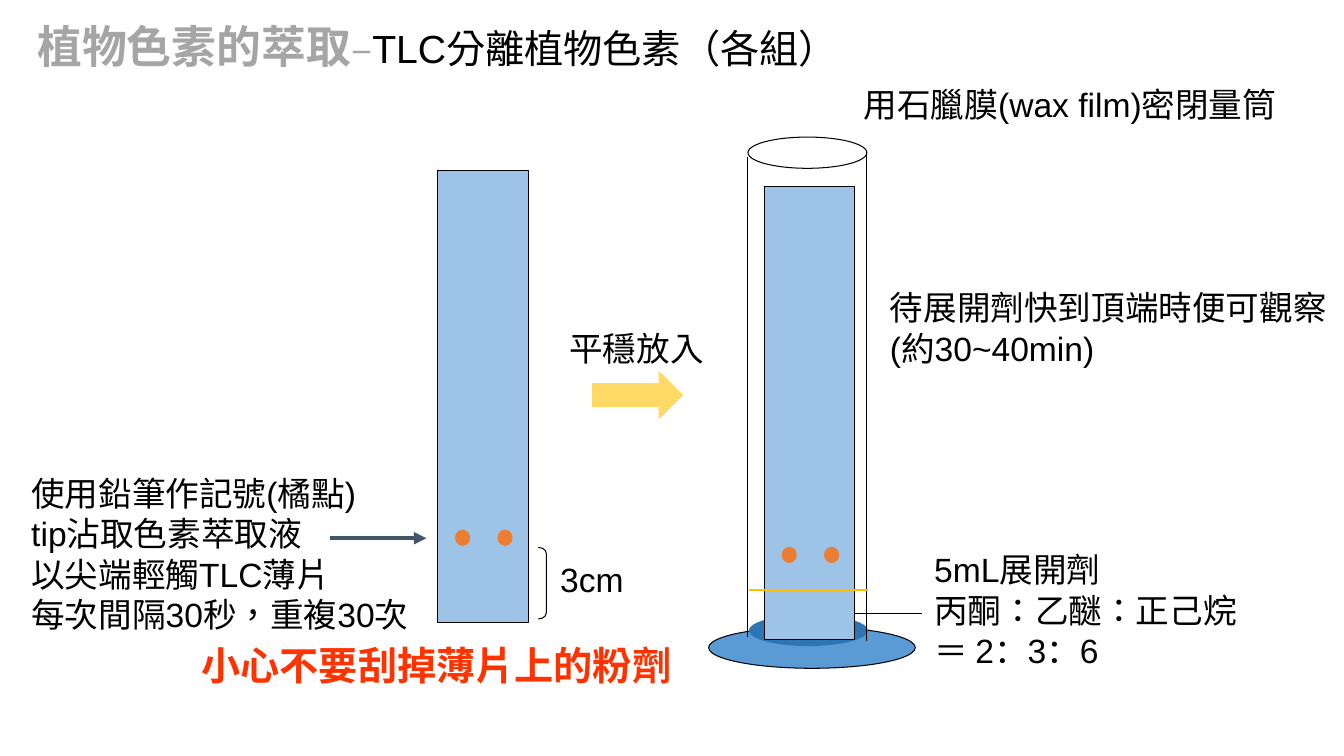
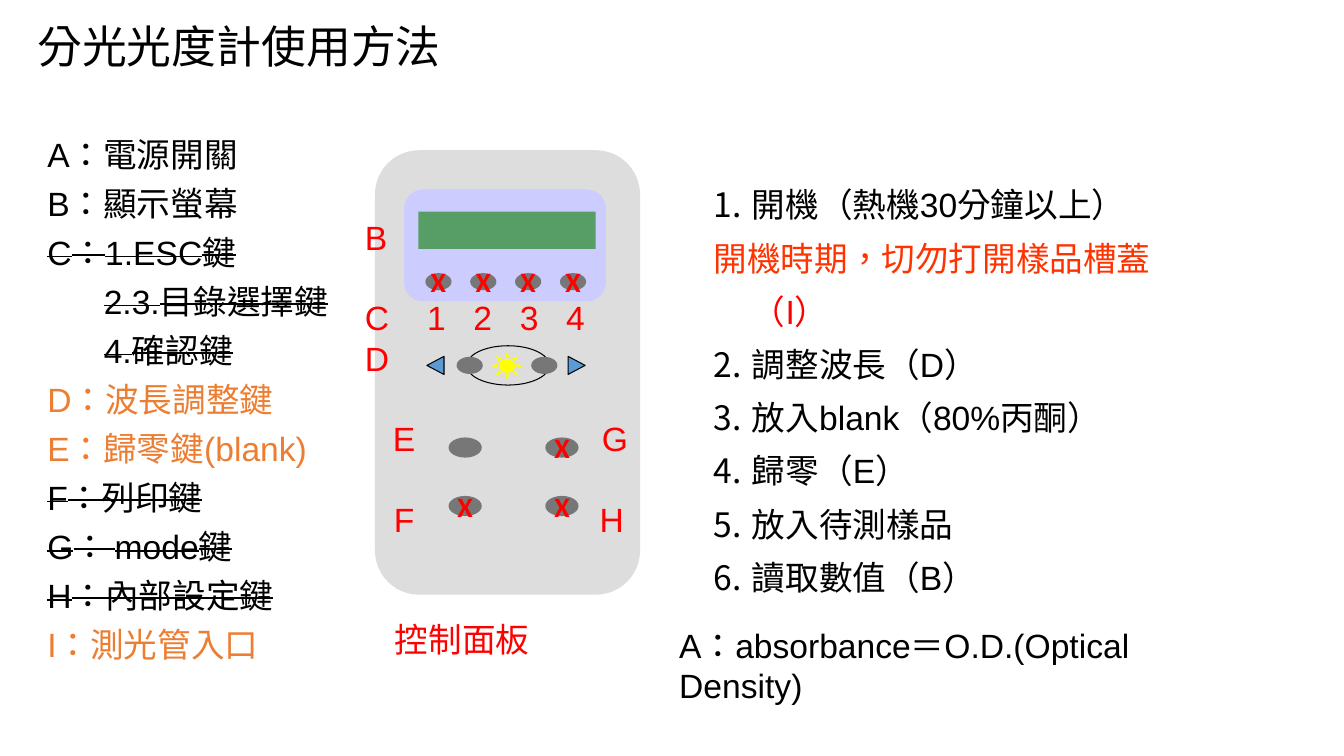
"""Build two slides on separating plant pigments and using a spectrophotometer."""
from dataclasses import dataclass, replace
from typing import Optional, Sequence

from lxml.etree import SubElement
from pptx import Presentation
from pptx.dml.color import RGBColor
from pptx.enum.shapes import MSO_CONNECTOR, MSO_SHAPE
from pptx.enum.text import MSO_ANCHOR, MSO_AUTO_SIZE, PP_ALIGN
from pptx.oxml.ns import qn
from pptx.shapes.autoshape import Shape
from pptx.slide import Slide
from pptx.text.text import TextFrame
from pptx.util import Inches, Pt

CELL = Inches(0.1)
COLUMNS, ROWS = 133.33, 75
LATIN_FONT, MARK_FONT, CHINESE_FONT = "Arial", "Calibri", "Noto Sans CJK SC"
LANGUAGE = "zh-TW"

BLACK, RED, WARNING, ORANGE = "000000", "FF0000", "FF3300", "ED7D31"
MUTED, STRIP, SOLVENT, BASE = "A5A5A5", "9DC3E6", "2E75B6", "5B9BD5"
ARROW, GOLD, SLATE, BUTTON = "FFD966", "FFC000", "44546A", "777777"
CASING, BEZEL, SCREEN, SUN = "DDDDDD", "CCCCFF", "569E65", "FFFF00"


@dataclass(frozen=True)
class Box:
    """Place and size in grid cells."""
    column: float
    row: float
    columns: float
    rows: float


@dataclass(frozen=True)
class Span:
    """Text that may differ from its paragraph."""
    text: str
    size: Optional[float] = None
    color: Optional[str] = None
    bold: Optional[bool] = None


@dataclass(frozen=True)
class Para:
    """A paragraph and its format."""
    spans: tuple[Span, ...]
    size: float = 24
    color: str = BLACK
    bold: bool = False
    strike: bool = False
    font: str = LATIN_FONT
    align: PP_ALIGN = PP_ALIGN.LEFT
    spacing: Optional[float] = None
    margin: float = 0
    indent: float = 0
    number: Optional[int] = None


@dataclass(frozen=True)
class Figure:
    """A preset shape and its look."""
    kind: MSO_SHAPE
    box: Box
    fill: Optional[str] = None
    line: Optional[str] = None
    rotation: float = 0
    adjustment: Optional[float] = None


@dataclass(frozen=True)
class Stroke:
    """A straight line between two grid points."""
    start: tuple[float, float]
    end: tuple[float, float]
    color: str = BLACK
    weight: float = 0.75
    arrow: bool = False


TITLE_BOX = Box(2.7, 1.3, 86, 6.4)
TITLE = Para((), size=32)


def cells(count: float) -> int:
    """Turn grid cells into a length."""
    return round(count * CELL)


def rgb(color: str) -> RGBColor:
    """Turn a hex string into a colour."""
    return RGBColor.from_string(color)


def plain(text: str, **style) -> Para:
    """Make a paragraph of a single span."""
    return Para((Span(text),), **style)


def format_paragraph(paragraph, para: Para) -> None:
    """Apply the paragraph's font, spacing, indents and numbering."""
    font = paragraph.font
    font.size, font.bold, font.name = Pt(para.size), para.bold, para.font
    font.color.rgb = rgb(para.color)
    paragraph.alignment = para.align
    paragraph.line_spacing = Pt(para.spacing or round(para.size * 1.2, 1))
    paragraph.space_before = paragraph.space_after = Pt(0)
    properties = paragraph._p.get_or_add_pPr()
    properties.set("marL", str(cells(para.margin)))
    properties.set("indent", str(cells(para.indent)))
    default = properties.find(qn("a:defRPr"))
    default.set("lang", LANGUAGE)
    if para.strike:
        default.set("strike", "sngStrike")
    SubElement(default, qn("a:ea")).set("typeface", CHINESE_FONT)
    if para.number is None:
        bullet = SubElement(properties, qn("a:buNone"))
    else:
        bullet = SubElement(properties, qn("a:buAutoNum"))
        bullet.set("type", "arabicPeriod")
        bullet.set("startAt", str(para.number))
    default.addprevious(bullet)


def write(frame: TextFrame, paras: Sequence[Para]) -> None:
    """Fill a text frame with paragraphs."""
    frame.word_wrap = True
    frame.auto_size = MSO_AUTO_SIZE.NONE
    for index, para in enumerate(paras):
        paragraph = frame.add_paragraph() if index else frame.paragraphs[0]
        format_paragraph(paragraph, para)
        for span in para.spans:
            run = paragraph.add_run()
            run.text = span.text
            if span.size:
                run.font.size = Pt(span.size)
            if span.color:
                run.font.color.rgb = rgb(span.color)
            if span.bold is not None:
                run.font.bold = span.bold


def fill_placeholder(holder: Shape, box: Box, paras: Sequence[Para]) -> None:
    """Move a template placeholder and write its text."""
    holder.left, holder.top = cells(box.column), cells(box.row)
    holder.width, holder.height = cells(box.columns), cells(box.rows)
    write(holder.text_frame, paras)


def add_text(page: Slide, box: Box, *paras: Para) -> Shape:
    """Add a wrapped text box."""
    shape = page.shapes.add_textbox(*map(cells, (box.column, box.row, box.columns, box.rows)))
    write(shape.text_frame, paras)
    return shape


def add_mark(page: Slide, center: tuple[float, float], para: Para) -> None:
    """Centre a short label on a grid point."""
    box = Box(center[0] - 2, center[1] - 2.5, 4, 5)
    frame = add_text(page, box, replace(para, align=PP_ALIGN.CENTER)).text_frame
    frame.margin_left = frame.margin_right = frame.margin_top = frame.margin_bottom = 0
    frame.vertical_anchor = MSO_ANCHOR.MIDDLE


def add_figure(page: Slide, figure: Figure) -> None:
    """Draw a preset shape."""
    box = figure.box
    shape = page.shapes.add_shape(
        figure.kind, *map(cells, (box.column, box.row, box.columns, box.rows)))
    shape.shadow.inherit = False
    shape.rotation = figure.rotation
    if figure.adjustment is not None:
        shape.adjustments[0] = figure.adjustment
    if figure.fill:
        shape.fill.solid()
        shape.fill.fore_color.rgb = rgb(figure.fill)
    else:
        shape.fill.background()
    if figure.line:
        shape.line.color.rgb = rgb(figure.line)
        shape.line.width = Pt(0.75)
    else:
        shape.line.fill.background()


def add_stroke(page: Slide, stroke: Stroke) -> None:
    """Draw a straight line or arrow."""
    connector = page.shapes.add_connector(
        MSO_CONNECTOR.STRAIGHT, *map(cells, stroke.start + stroke.end))
    connector.line.color.rgb = rgb(stroke.color)
    connector.line.width = Pt(stroke.weight)
    properties = connector._element.spPr
    if stroke.arrow:
        SubElement(properties.find(qn("a:ln")), qn("a:tailEnd")).set("type", "triangle")
    SubElement(properties, qn("a:effectLst"))


def add_strip(page: Slide, column: float, row: float, spot_row: float) -> None:
    """Draw a chromatography strip with its two spots."""
    add_figure(page, Figure(MSO_SHAPE.RECTANGLE, Box(column, row, 9, 44.9), STRIP, BLACK))
    for offset in (1.8, 6):
        spot = Box(column + offset, spot_row, 1.4, 1.5)
        add_figure(page, Figure(MSO_SHAPE.OVAL, spot, ORANGE, ORANGE))


def build_chromatography(deck) -> None:
    """Build the slide on separating pigments."""
    page = deck.slides.add_slide(deck.slide_layouts[1])
    heading = (Span("植物色素的萃取", color=MUTED, bold=True),
               Span("–", size=28, color=MUTED),
               Span("TLC分離植物色素（各組）", size=28))
    fill_placeholder(page.shapes.title, TITLE_BOX, [replace(TITLE, spans=heading)])
    steps = ("使用鉛筆作記號(橘點)", "tip沾取色素萃取液", "以尖端輕觸TLC薄片", "每次間隔30秒，重複30次")
    fill_placeholder(page.placeholders[1], Box(2.1, 46.4, 39.8, 20.8),
                     [plain(step) for step in steps])
    add_strip(page, 43.4, 16.9, 52.6)
    for figure in (
        Figure(MSO_SHAPE.OVAL, Box(74.2, 13.6, 11.8, 3.1), line=BLACK),
        Figure(MSO_SHAPE.OVAL, Box(70.3, 62.2, 20.5, 4.1), BASE, BLACK),
        Figure(MSO_SHAPE.OVAL, Box(74.3, 61, 11.8, 3.1), SOLVENT),
        Figure(MSO_SHAPE.LEFT_BRACKET, Box(53.4, 54.3, 0.8, 7.1), None, BLACK, 180, 0.76),
        Figure(MSO_SHAPE.RIGHT_ARROW, Box(58.8, 36.9, 8.9, 4.6), ARROW, ARROW),
    ):
        add_figure(page, figure)
    add_strip(page, 75.8, 18.5, 54.3)
    for stroke in (
        Stroke((74.2, 15.6), (74.2, 63.2)),
        Stroke((86, 14.9), (86, 63.6)),
        Stroke((84.8, 60.9), (91.5, 60.9)),
        Stroke((74.3, 58.5), (86.1, 58.5), GOLD, 1.5),
        Stroke((32.7, 53.4), (42.3, 53.4), SLATE, 3, True),
    ):
        add_stroke(page, stroke)
    add_text(page, Box(54.6, 55, 8.3, 5), plain("3cm"))
    add_text(page, Box(19, 63.1, 49.5, 5.7),
             plain("小心不要刮掉薄片上的粉劑", size=28, color=WARNING, bold=True))
    add_text(page, Box(84.7, 7.8, 47, 5), plain("用石臘膜(wax film)密閉量筒"))
    add_text(page, Box(91.7, 54, 32.6, 13.1),
             plain("5mL展開劑"), plain("丙酮：乙醚：正己烷"), plain("＝ 2：3：6"))
    add_text(page, Box(87.3, 28, 46, 9.1), plain("待展開劑快到頂端時便可觀察(約30~40min)"))
    add_text(page, Box(55.5, 32, 16, 5), plain("平穩放入"))


def build_spectrophotometer(deck) -> None:
    """Build the slide on the spectrophotometer."""
    page = deck.slides.add_slide(deck.slide_layouts[3])
    fill_placeholder(page.shapes.title, TITLE_BOX,
                     [replace(TITLE, spans=(Span("分光光度計使用方法"),))])
    unused, needed = {"strike": True}, {"color": ORANGE}
    unused_inner = {"strike": True, "indent": 5.6}
    legend = (
        ("A：電源開關", {}), ("B：顯示螢幕", {}), ("C：1.ESC鍵", unused),
        ("2.3.目錄選擇鍵", unused_inner), ("4.確認鍵", unused_inner),
        ("D：波長調整鍵", needed), ("E：歸零鍵(blank)", needed), ("F：列印鍵", unused),
        ("G： mode鍵", unused), ("H：內部設定鍵", unused), ("I：測光管入口", needed),
    )
    fill_placeholder(page.placeholders[1], Box(3.7, 11.9, 30, 60),
                     [plain(text, spacing=35, **style) for text, style in legend])
    hanging = {"spacing": 38, "margin": 3.8, "indent": -3.8}
    steps = ("開機（熱機30分鐘以上）", "調整波長（D）", "放入blank（80%丙酮）",
             "歸零（E）", "放入待測樣品", "讀取數值（B）")
    procedure = [plain(step, number=number, **hanging)
                 for number, step in enumerate(steps, 1)]
    caution = (Span("開機時期，切勿打開樣品槽蓋"), Span("（I）", color=RED))
    procedure.insert(1, Para(caution, color=WARNING, **hanging))
    fill_placeholder(page.placeholders[2], Box(69.8, 16.5, 51, 43), procedure)

    for figure in (
        Figure(MSO_SHAPE.ROUNDED_RECTANGLE, Box(37.2, 14.9, 26.3, 44.1), CASING),
        Figure(MSO_SHAPE.OVAL, Box(46.3, 34.3, 8.2, 3.9), line=BLACK),
        Figure(MSO_SHAPE.ROUNDED_RECTANGLE, Box(40.1, 18.8, 20, 11.1), BEZEL),
        Figure(MSO_SHAPE.RECTANGLE, Box(41.5, 21, 17.6, 3.7), SCREEN),
        Figure(MSO_SHAPE.SUN, Box(48.7, 34.9, 3.2, 2.8), SUN),
        Figure(MSO_SHAPE.ISOSCELES_TRIANGLE, Box(56.3, 35.4, 1.8, 1.7), BASE, BLACK, 90),
        Figure(MSO_SHAPE.ISOSCELES_TRIANGLE, Box(42.3, 35.4, 1.8, 1.7), BASE, BLACK, 270),
    ):
        add_figure(page, figure)
    small = [Box(42.2 + 4.45 * key, 27.1, 2.6, 1.7) for key in range(4)]
    small += [Box(column, 35.4, 2.6, 1.7) for column in (45.3, 52.7)]
    large = [Box(column, row, 3.3, 2) for row in (43.4, 49.2) for column in (44.5, 54.1)]
    for button in small + large:
        add_figure(page, Figure(MSO_SHAPE.OVAL, button, BUTTON))
    for button in small[:4] + large[1:]:
        center = (button.column + button.columns / 2, button.row + button.rows / 2)
        add_mark(page, center, plain("X", size=20, color=RED, bold=True, font=MARK_FONT))
    labels = {"B": (37.3, 23.5), "C": (37.4, 31.5), "D": (37.4, 35.5), "E": (40.1, 43.5),
              "G": (61, 43.5), "F": (40.1, 51.5), "H": (60.7, 51.5)}
    labels.update({str(key + 1): (43.3 + 4.6 * key, 31.5) for key in range(4)})
    for text, center in labels.items():
        add_mark(page, center, plain(text, color=RED))
    add_text(page, Box(38.2, 60.9, 16, 5), plain("控制面板", color=RED))
    add_text(page, Box(66.4, 61.5, 56, 9), plain("A：absorbance＝O.D.(Optical Density)"))


def main() -> None:
    """Build and save the deck."""
    deck = Presentation()
    deck.slide_width, deck.slide_height = cells(COLUMNS), cells(ROWS)
    build_chromatography(deck)
    build_spectrophotometer(deck)
    deck.save("out.pptx")


if __name__ == "__main__":
    main()
